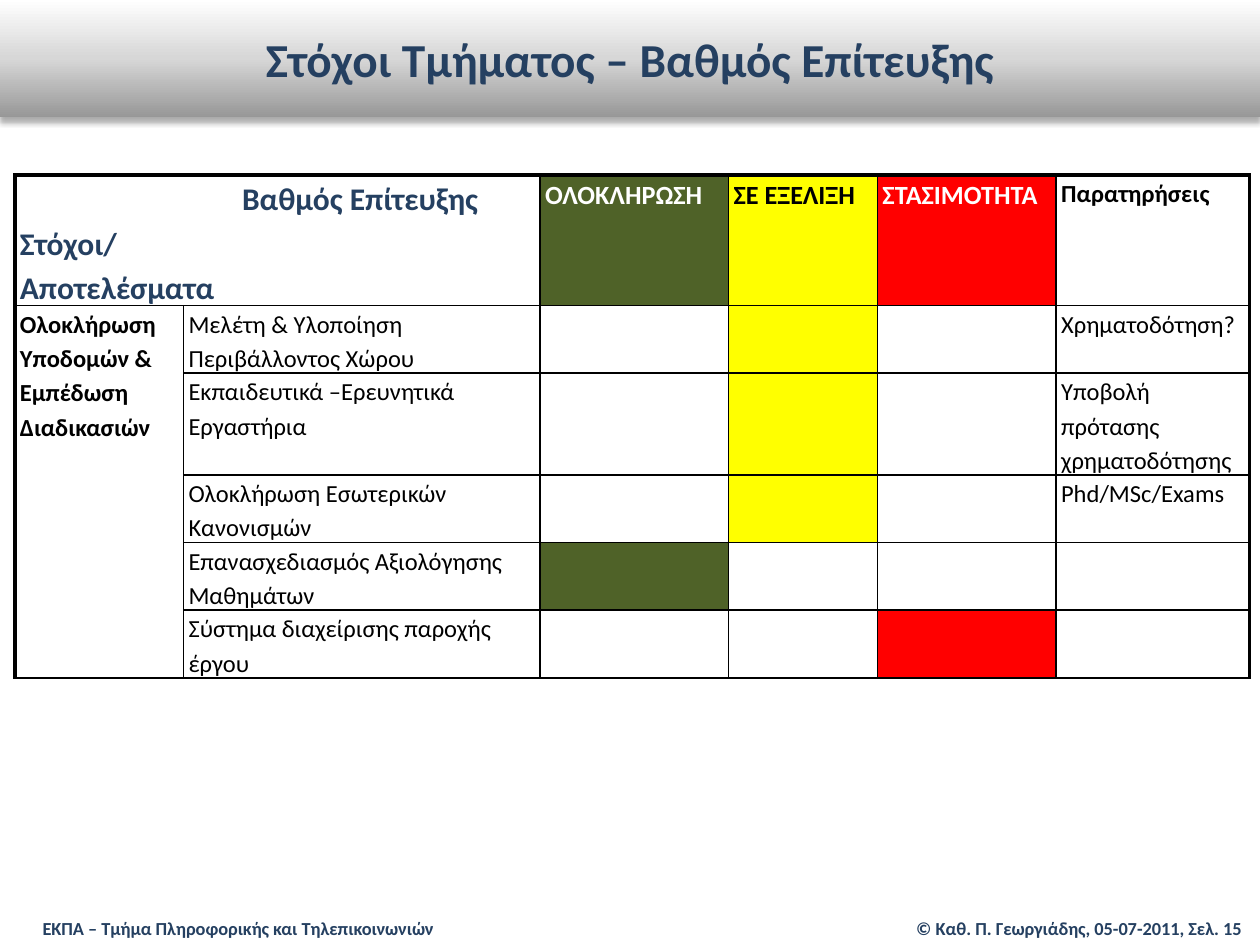
from copy import deepcopy

from lxml.etree import SubElement
from pptx import Presentation
from pptx.dml.color import RGBColor
from pptx.enum.shapes import MSO_SHAPE as Shape
from pptx.enum.text import MSO_ANCHOR as Anchor, MSO_AUTO_SIZE as AutoSize, PP_ALIGN as Align
from pptx.oxml.ns import qn
from pptx.util import Cm, Pt

COLORS = {
    "navy": "254061", "black": "000000", "white": "FFFFFF",
    "green": "4F6228", "yellow": "FFFF00", "red": "FF0000",
}
FONT = "Calibri"
TITLE = "Στόχοι Τμήματος – Βαθμός Επίτευξης"
BANNER_STOPS = [(0, "979797"), (0.5, "D7D7D7"), (1, "FFFFFF")]
FOOTERS = [
    ("ΕΚΠΑ – Τμήμα Πληροφορικής και Τηλεπικοινωνιών", 0.61, 9.3, Align.LEFT),
    ("© Καθ. Π. Γεωργιάδης, 05-07-2011, Σελ. 15", 18.08, 7.21, Align.RIGHT),
]
CORNER = [("Βαθμός Επίτευξης", 4.48), ("Στόχοι/", 0), ("Αποτελέσματα", 0)]
STATUSES = [
    ("ΟΛΟΚΛΗΡΩΣΗ", "green", "white"),
    ("ΣΕ ΕΞΕΛΙΞΗ", "yellow", "black"),
    ("ΣΤΑΣΙΜΟΤΗΤΑ", "red", "white"),
]
NOTES_HEADING = "Παρατηρήσεις"
GROUP = "Ολοκλήρωση Υποδομών & Εμπέδωση Διαδικασιών"
GOALS = [
    ("Μελέτη & Υλοποίηση Περιβάλλοντος Χώρου", 1, "Χρηματοδότηση?"),
    ("Εκπαιδευτικά –Ερευνητικά Εργαστήρια", 1, "Υποβολή πρότασης χρηματοδότησης"),
    ("Ολοκλήρωση Εσωτερικών Κανονισμών", 1, "Phd/MSc/Exams"),
    ("Επανασχεδιασμός Αξιολόγησης Μαθημάτων", 0, ""),
    ("Σύστημα διαχείρισης παροχής έργου", 2, ""),
]
COLUMN_WIDTHS = [3.4, 7.19, 3.8, 3.0, 3.6, 3.9]
ROW_HEIGHTS = [2.62, 1.36, 2.05, 1.36, 1.36, 1.37]
THICK, THIN = 2.25, 1


def add_span(para, text, size, color, bold=True):
    span = para.add_run()
    span.text = text
    font = span.font
    font.name, font.size, font.bold = FONT, Pt(size), bold
    font.color.rgb = RGBColor.from_string(COLORS[color])


def write_cell(cell, lines, size=14, color="black", bold=True):
    frame = cell.text_frame
    for number, (text, indent) in enumerate(lines):
        para = frame.add_paragraph() if number else frame.paragraphs[0]
        para.line_spacing = 1.15
        if indent:
            para._p.get_or_add_pPr().set("marL", str(Cm(indent)))
        add_span(para, text, size, color, bold)


def fill_cell(cell, color):
    cell.fill.solid()
    cell.fill.fore_color.rgb = RGBColor.from_string(COLORS[color])


def add_borders(cell, widths):
    properties = cell._tc.get_or_add_tcPr()
    for side, width in widths.items():
        line = SubElement(properties, qn(f"a:ln{side}"), w=str(Pt(width)))
        paint = SubElement(line, qn("a:solidFill"))
        SubElement(paint, qn("a:srgbClr"), val=COLORS["black"])


def add_footer(slide, text, left, width, align):
    box = slide.shapes.add_textbox(Cm(left), Cm(18.36), Cm(width), Cm(0.7))
    frame = box.text_frame
    frame.word_wrap = True
    frame.auto_size = AutoSize.SHAPE_TO_FIT_TEXT
    para = frame.paragraphs[0]
    para.alignment = align
    add_span(para, text, 10.5, "navy")


def add_goal_table(slide):
    row_count, column_count = len(ROW_HEIGHTS), len(COLUMN_WIDTHS)
    table = slide.shapes.add_table(
        row_count, column_count, Cm(0.3), Cm(3.53),
        Cm(sum(COLUMN_WIDTHS)), Cm(sum(ROW_HEIGHTS))).table
    table.first_row = table.horz_banding = False
    for column, width in zip(table.columns, COLUMN_WIDTHS):
        column.width = Cm(width)
    for row, height in zip(table.rows, ROW_HEIGHTS):
        row.height = Cm(height)
    for r in range(row_count):
        for c in range(column_count):
            cell = table.cell(r, c)
            cell.margin_left = cell.margin_right = Cm(0.1)
            cell.margin_top = cell.margin_bottom = 0
            add_borders(cell, {
                "L": THICK if c == 0 else THIN,
                "R": THICK if c == column_count - 1 else THIN,
                "T": THICK if r == 0 else THIN,
                "B": THIN,
            })
            cell.fill.background()
    table.cell(0, 0).merge(table.cell(0, 1))
    table.cell(1, 0).merge(table.cell(row_count - 1, 0))

    write_cell(table.cell(0, 0), CORNER, 18, "navy")
    for c, (text, fill, color) in enumerate(STATUSES, 2):
        write_cell(table.cell(0, c), [(text, 0)], 15, color)
        fill_cell(table.cell(0, c), fill)
    write_cell(table.cell(0, 5), [(NOTES_HEADING, 0)])
    write_cell(table.cell(1, 0), [(GROUP, 0)])
    for r, (goal, status, note) in enumerate(GOALS, 1):
        write_cell(table.cell(r, 1), [(goal, 0)], bold=False)
        fill_cell(table.cell(r, 2 + status), STATUSES[status][1])
        if note:
            write_cell(table.cell(r, 5), [(note, 0)], bold=False)


def add_banner(slide, width):
    banner = slide.shapes.add_shape(Shape.RECTANGLE, 0, Cm(-0.02), width, Cm(2.39))
    banner.line.fill.background()
    banner.fill.gradient()
    banner.fill.gradient_angle = 90
    properties = banner._element.spPr
    stop_list = properties.find(f".//{qn('a:gsLst')}")
    stop_list.insert(1, deepcopy(stop_list[0]))
    for stop, (position, color) in zip(banner.fill.gradient_stops, BANNER_STOPS):
        stop.position = position
        stop.color.rgb = RGBColor.from_string(color)

    banner.shadow.inherit = False
    shadow = SubElement(
        properties.find(qn("a:effectLst")), qn("a:outerShdw"),
        blurRad=str(Pt(3.5)), dist=str(Pt(2.2)), dir="5400000", rotWithShape="0")
    shade = SubElement(shadow, qn("a:srgbClr"), val=COLORS["black"])
    SubElement(shade, qn("a:alpha"), val="32000")

    frame = banner.text_frame
    frame.word_wrap = True
    frame.vertical_anchor = Anchor.MIDDLE
    para = frame.paragraphs[0]
    para.alignment = Align.CENTER
    add_span(para, TITLE, 27, "navy")


def main():
    deck = Presentation()
    deck.slide_width, deck.slide_height = Cm(25.4), Cm(19.05)
    page = deck.slides.add_slide(deck.slide_layouts[6])
    for footer in FOOTERS:
        add_footer(page, *footer)
    add_goal_table(page)
    add_banner(page, deck.slide_width)
    deck.save("out.pptx")


if __name__ == "__main__":
    main()
